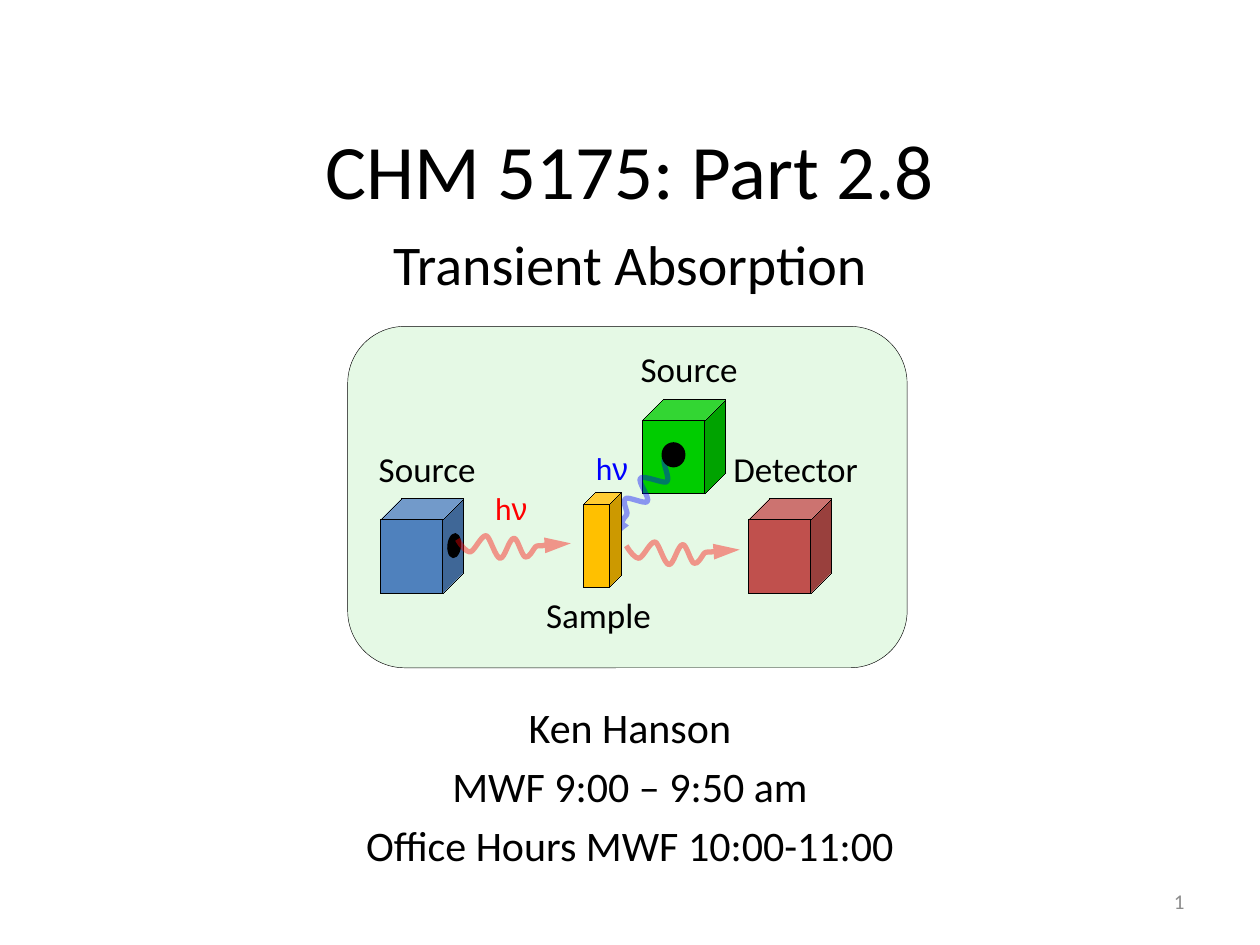
"""Build the title slide of a lecture on transient absorption."""
from lxml.etree import SubElement
from pptx import Presentation
from pptx.dml.color import RGBColor
from pptx.enum.shapes import MSO_SHAPE as Kind
from pptx.enum.text import MSO_ANCHOR as Anchor, PP_ALIGN as Align
from pptx.oxml.ns import qn
from pptx.util import Pt

BLACK = RGBColor(0, 0, 0)
GREY = RGBColor(0x8C, 0x8C, 0x8C)
GREEN = RGBColor(0, 0xCC, 0)
BLUE = RGBColor(0, 0, 0xFF)
RED = RGBColor(0xFF, 0, 0)
STEEL = RGBColor(0x4F, 0x81, 0xBD)
BRICK = RGBColor(0xC0, 0x50, 0x4D)
GOLD = RGBColor(0xFF, 0xC0, 0)

TITLE = ("CHM 5175: Part 2.8", (54, 38.2, 612, 115.9))
TEXTS = [
    (["Transient Absorption"], (108, 127.4, 504, 51.1), 32, BLACK, Align.CENTER, Anchor.TOP, 6.4),
    (["Ken Hanson", "MWF 9:00 – 9:50 am", "Office Hours MWF 10:00-11:00"],
     (108, 397.6, 504, 101.5), 24, BLACK, Align.CENTER, Anchor.TOP, 4.8),
    (["1"], (516.2, 500.4, 167.8, 28.8), 12, GREY, Align.RIGHT, Anchor.MIDDLE, 0),
]
LABELS = [
    ("Source", (353.5, 195.1, 80.6, 31.7)),
    ("Sample", (294.5, 335.5, 95, 31.7)),
    ("Detector", (399.6, 252, 110.2, 31.7)),
    ("Source", (203.8, 252, 80.6, 31.7)),
]
BEAMS = [(BLUE, (333.4, 252.9, 36, 28.8)), (RED, (275.8, 275.8, 41.8, 28.8))]

PANEL = (198.7, 186.5, 319.7, 195.1)
CUBE = (47.5, 54)
SCENE = [
    ("cube", GREEN, (367.2, 228.2, *CUBE), 0.25),
    ("cube", BRICK, (427.7, 285.1, *CUBE), 0.25),
    ("wave", BLUE, (333, 276.4), 134.6),
    ("wave", RED, (357.5, 311), 5.4),
    ("dot", BLACK, (378, 252.7, 13.7, 14.4), 0),
    ("cube", GOLD, (333.4, 281.5, 21.6, 54), 0.316),
    ("cube", STEEL, (217.4, 285.1, *CUBE), 0.25),
    ("dot", BLACK, (255.6, 304.6, 7.9, 14.4), 5.7),
    ("wave", RED, (261, 307.4), 5.4),
]
TIP = (64.8, 0)
CURVES = [
    (TIP, (51.9, 1.9), (48.4, 3)),
    ((44.8, 3.3), (46.2, 3.2), (44.8, 4)),
    ((43.6, 5.6), (41.9, 10.8), (39.6, 10.3)),
    ((37.5, 9.8), (34.3, 0), (32.2, 0.2)),
    ((29.3, 0.5), (28.2, 12.1), (25.3, 12.4)),
    ((22.5, 12), (18.5, 0.8), (16.3, 0.2)),
    ((13.3, 0), (10.6, 9.5), (7.9, 10.4)),
    ((5.7, 10.6), (2.5, 7.3), (0, 3.9)),
]


def pts(nums):
    return [Pt(n) for n in nums]


def style(obj, **vals):
    for key, val in vals.items():
        setattr(obj, key, val)


def write(para, text, size, color, font="Calibri"):
    run = para.add_run()
    run.text = text
    style(run.font, size=Pt(size), name=font)
    run.font.color.rgb = color


def text_box(shapes, lines, box, size, color, align, anchor=Anchor.TOP, gap=0):
    frame = shapes.add_textbox(*pts(box)).text_frame
    style(frame, word_wrap=True, vertical_anchor=anchor)
    for i, line in enumerate(lines):
        para = frame.add_paragraph() if i else frame.paragraphs[0]
        style(para, alignment=align, space_before=Pt(gap))
        write(para, line, size, color)
    return frame


def fade(shape, place, percent):
    for node in shape.element.xpath(f"./p:spPr/{place}a:solidFill/a:srgbClr"):
        SubElement(node, qn("a:alpha")).set("val", str(percent * 1000))


def solid(shapes, kind, color, box, width=None):
    shape = shapes.add_shape(kind, *pts(box))
    shape.shadow.inherit = False
    shape.fill.solid()
    shape.fill.fore_color.rgb = color
    if width is None:
        shape.line.fill.background()
    else:
        shape.line.color.rgb = BLACK
        shape.element.spPr.find(qn("a:ln")).set("w", str(int(Pt(width))))
    return shape


def bend(shape):
    for node, knots in zip(shape.element.xpath(".//a:lnTo"), CURVES):
        node.clear()
        curve = SubElement(node.getparent(), qn("a:cubicBezTo"))
        node.getparent().replace(node, curve)
        for x, y in knots:
            SubElement(curve, qn("a:pt"), x=str(int(Pt(x))), y=str(int(Pt(y))))


def wave(shapes, color, place, turn):
    left, top = place
    spots = [pts((left + x, top + y)) for x, y in [TIP] + [row[-1] for row in CURVES]]
    pen = shapes.build_freeform(*spots[0])
    pen.add_line_segments(spots[1:], close=False)
    shape = pen.convert_to_shape()
    bend(shape)
    shape.rotation = turn
    shape.shadow.inherit = False
    shape.fill.background()
    shape.line.color.rgb = color
    shape.line.width = Pt(3)
    fade(shape, "a:ln/", 40)
    line = shape.element.spPr.find(qn("a:ln"))
    SubElement(line, qn("a:headEnd"), type="triangle", w="med", len="lg")


def main():
    deck = Presentation()
    style(deck, slide_width=Pt(720), slide_height=Pt(540))
    slide = deck.slides.add_slide(deck.slide_layouts[5])
    text, box = TITLE
    title = slide.shapes.title
    style(title, **dict(zip(("left", "top", "width", "height"), pts(box))))
    title.text_frame.vertical_anchor = Anchor.MIDDLE
    para = title.text_frame.paragraphs[0]
    para.alignment = Align.CENTER
    write(para, text, 44, BLACK)
    for row in TEXTS:
        text_box(slide.shapes, *row)

    group = slide.shapes.add_group_shape().shapes
    fade(solid(group, Kind.ROUNDED_RECTANGLE, GREEN, PANEL, 0.25), "", 10)
    for kind, color, place, value in SCENE:
        if kind == "wave":
            wave(group, color, place, value)
        elif kind == "cube":
            solid(group, Kind.CUBE, color, place, 0).adjustments[0] = value
        else:
            solid(group, Kind.OVAL, color, place).rotation = value
    for name, box in LABELS:
        text_box(group, [name], box, 20, BLACK, Align.CENTER)
    for color, box in BEAMS:
        frame = text_box(group, ["h"], box, 18, color, Align.LEFT)
        write(frame.paragraphs[0], "ν", 18, color, "Arial")
    deck.save("out.pptx")


if __name__ == "__main__":
    main()
